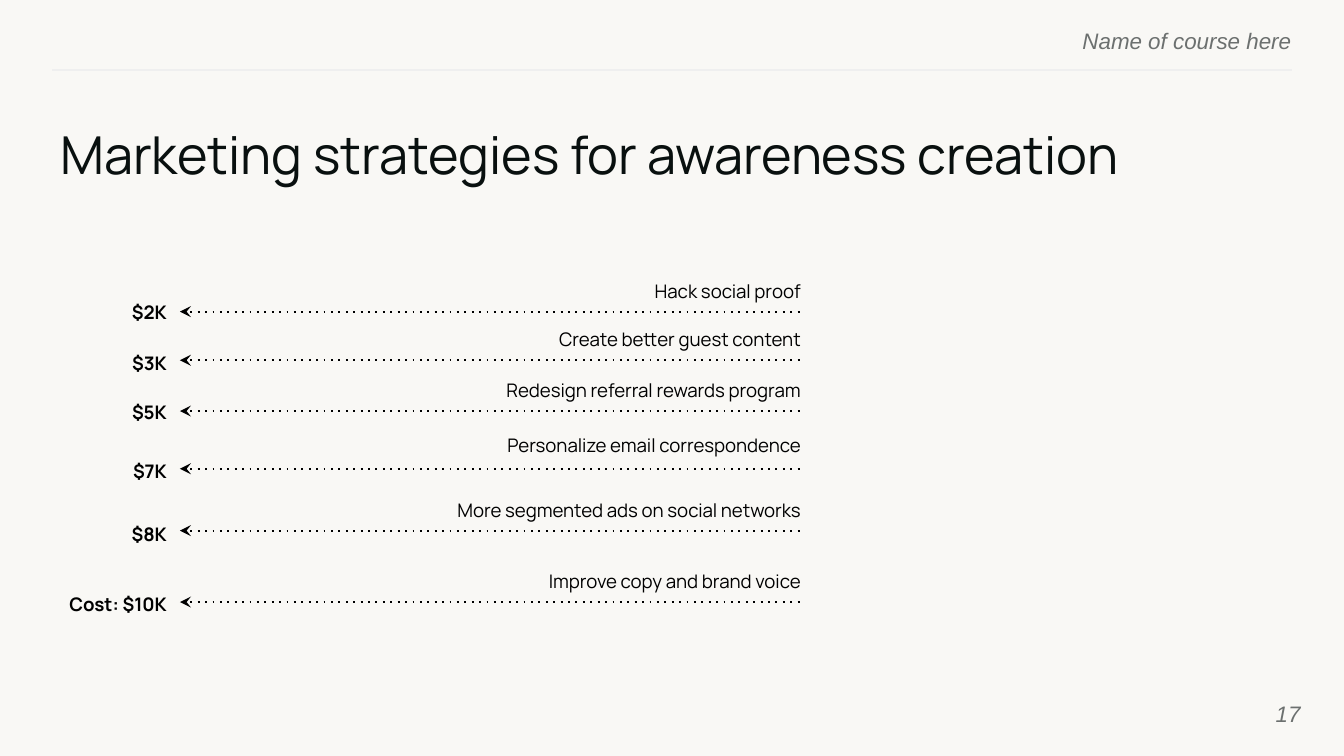
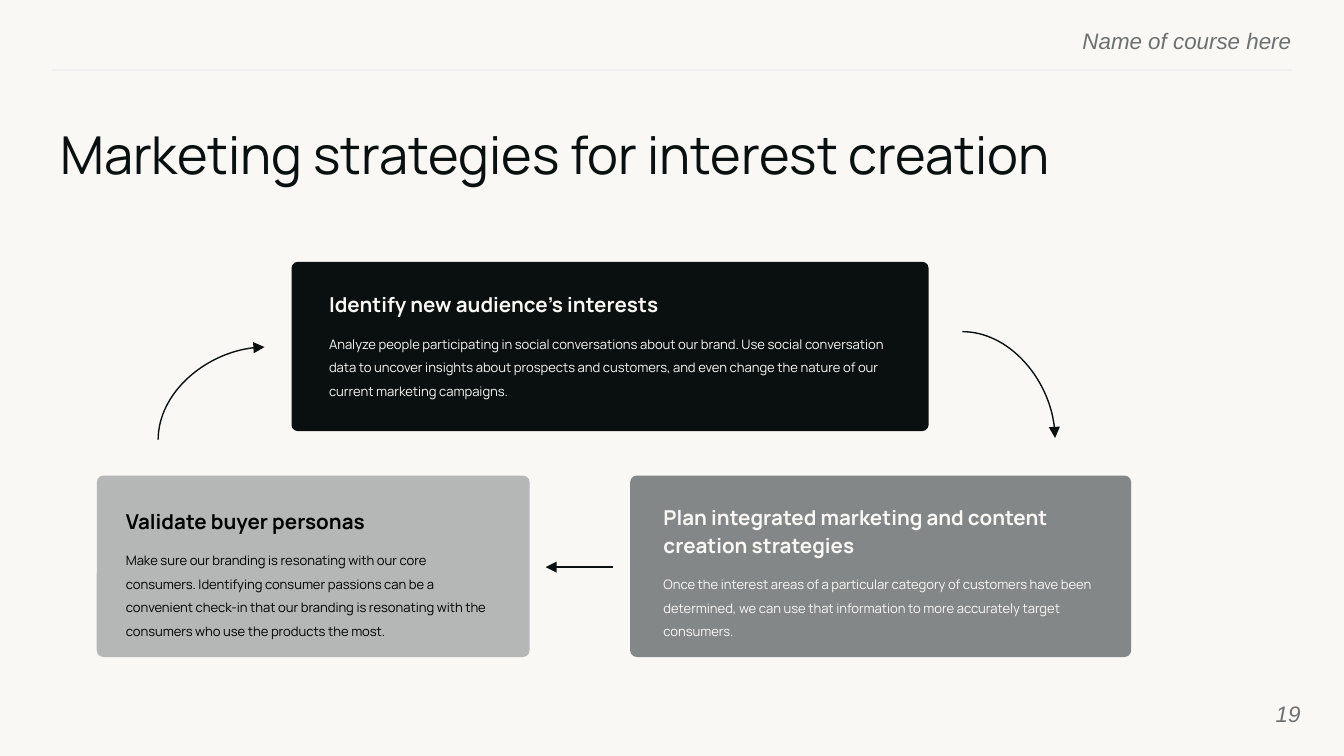
from dataclasses import dataclass

from lxml import etree
from pptx import Presentation
from pptx import util as u
from pptx.dml.color import RGBColor
from pptx.enum import shapes, text
from pptx.oxml import ns


@dataclass(frozen=True)
class Theme:
    paper: str = "F9F8F5"
    ink: str = "09100F"
    black: str = "000000"
    muted: str = "6C706F"
    rule: str = "EFEFEF"
    light_card: str = "B5B7B7"
    mid_card: str = "838788"
    display: str = "Manrope"
    plain: str = "Arial"
    title_size: int = 28
    margin_size: int = 12
    heading_size: int = 11
    label_size: int = 10
    body_size: int = 7


theme = Theme()
right = text.PP_ALIGN.RIGHT


def add_text(page, place, lines, sizes, colour, font=theme.display, bold=False,
             italic=False, align=text.PP_ALIGN.LEFT, inset=(0, 0)):
    box = page.shapes.add_textbox(*[u.Cm(length) for length in place])
    frame = box.text_frame
    frame.word_wrap = True
    frame.margin_left = frame.margin_right = u.Cm(inset[0])
    frame.margin_top = frame.margin_bottom = u.Cm(inset[1])
    frame.text = "\n".join(lines)
    for para, size in zip(frame.paragraphs, sizes):
        para.alignment = align
        for span in para.runs:
            span.font.name = font
            span.font.size = u.Pt(size)
            span.font.bold = bold
            span.font.italic = italic
            span.font.color.rgb = RGBColor.from_string(colour)
    return frame


def add_line(page, ends, colour, width=0.75, dash=None, head=None, tail=None,
             kind=shapes.MSO_CONNECTOR.STRAIGHT):
    line = page.shapes.add_connector(kind, *[u.Cm(length) for length in ends])
    line.line.color.rgb = RGBColor.from_string(colour)
    line.line.width = u.Pt(width)
    stroke = line.line._get_or_add_ln()
    for tag, attribute, value in (("a:prstDash", "val", dash), ("a:headEnd", "type", head),
                                  ("a:tailEnd", "type", tail)):
        if value:
            etree.SubElement(stroke, ns.qn(tag)).set(attribute, value)
    etree.SubElement(line._element.spPr, ns.qn("a:effectLst"))
    return line


deck = Presentation()
deck.slide_width, deck.slide_height = u.Cm(25.4), u.Cm(14.29)

pages = []
for title, number in (("Marketing strategies for awareness creation", "17"),
                      ("Marketing strategies for interest creation", "19")):
    page = deck.slides.add_slide(deck.slide_layouts[6])
    page.background.fill.solid()
    page.background.fill.fore_color.rgb = RGBColor.from_string(theme.paper)
    add_text(page, (14.63, 0.51, 9.78, 0.46), ["Name of course here"], [theme.margin_size],
             theme.muted, font=theme.plain, italic=True, align=right)
    add_line(page, (24.41, 1.32, 0.99, 1.32), theme.rule)
    frame = add_text(page, (1.14, 2.31, 23.44, 1.3), [title], [theme.title_size], theme.ink)
    frame.paragraphs[0].space_after = u.Pt(10)
    frame = add_text(page, (23.06, 12.95, 1.52, 1.09), [number], [theme.margin_size],
                     theme.muted, font=theme.plain, italic=True, align=right)
    frame.vertical_anchor = text.MSO_ANCHOR.MIDDLE
    pages.append(page)

cost_page, cycle_page = pages

label_right, cost_right, row_height = 15.38, 3.4, 0.53
strategies = [
    ("Hack social proof", 8.97, 5.16, 5.89, "$2K", 1.24, 5.56),
    ("Create better guest content", 7.34, 6.07, 6.81, "$3K", 1.24, 6.53),
    ("Redesign referral rewards program", 6.71, 7.04, 7.77, "$5K", 1.24, 7.44),
    ("Personalize email correspondence", 6.65, 8.08, 8.86, "$7K", 1.24, 8.56),
    ("More segmented ads on social networks", 7.34, 9.3, 10.03, "$8K", 1.24, 9.75),
    ("Improve copy and brand voice", 7.34, 10.64, 11.38, "Cost: $10K", 0, 11.07),
]
for label, label_left, label_top, line_y, cost, cost_left, cost_top in strategies:
    add_line(cost_page, (3.4, line_y, 15.19, line_y), theme.black, 1, dash="dot", head="stealth")
    for words, left, top, edge, bold in ((label, label_left, label_top, label_right, False),
                                         (cost, cost_left, cost_top, cost_right, True)):
        add_text(cost_page, (left, top, edge - left, row_height), [words], [theme.label_size],
                 theme.black, bold=bold, align=right, inset=(0.25, 0.13))

cards = [
    ((1.83, 8.99, 8.18, 3.43), theme.light_card, (2.13, 9.3, 7.44, 2.92), theme.black,
     "Validate buyer personas",
     "Make sure our branding is resonating with our core consumers. Identifying consumer "
     "passions can be a convenient check-in that our branding is resonating with the "
     "consumers who use the products the most."),
    ((11.91, 8.99, 9.47, 3.43), theme.mid_card, (12.29, 9.22, 8.74, 3), theme.paper,
     "Plan integrated marketing and content creation strategies",
     "Once the interest areas of a particular category of customers have been determined, "
     "we can use that information to more accurately target consumers."),
    ((5.51, 4.95, 12.04, 3.2), theme.ink, (5.97, 5.21, 11.48, 2.46), theme.paper,
     "Identify new audience’s interests",
     "Analyze people participating in social conversations about our brand. Use social "
     "conversation data to uncover insights about prospects and customers, and even change "
     "the nature of our current marketing campaigns."),
]
for place, fill, text_place, colour, heading, body in cards:
    card = cycle_page.shapes.add_shape(shapes.MSO_SHAPE.ROUNDED_RECTANGLE,
                                       *[u.Cm(length) for length in place])
    card.adjustments[0] = 0.037
    card.shadow.inherit = False
    card.fill.solid()
    card.fill.fore_color.rgb = RGBColor.from_string(fill)
    card.line.fill.background()
    frame = add_text(cycle_page, text_place, [heading, body],
                     [theme.heading_size, theme.body_size], colour, inset=(0.25, 0.25))
    heading_para, body_para = frame.paragraphs
    heading_para.runs[0].font.bold = True
    heading_para.line_spacing = 1.15
    body_para.line_spacing = 1.5
    body_para.space_before = body_para.space_after = u.Pt(6)

for left, top, turn in ((3.12, 6.43, 270), (18.19, 6.27, 0)):
    arc = add_line(cycle_page, (left, top, left + 1.75, top + 2.01), theme.ink,
                   tail="triangle", kind=shapes.MSO_CONNECTOR.CURVE)
    arc._element.spPr.find(ns.qn("a:prstGeom")).set("prst", "curvedConnector2")
    arc._element.spPr.find(ns.qn("a:xfrm")).set("rot", str(turn * 60000))
add_line(cycle_page, (11.58, 10.72, 10.31, 10.72), theme.ink, tail="triangle")

deck.save("out.pptx")
